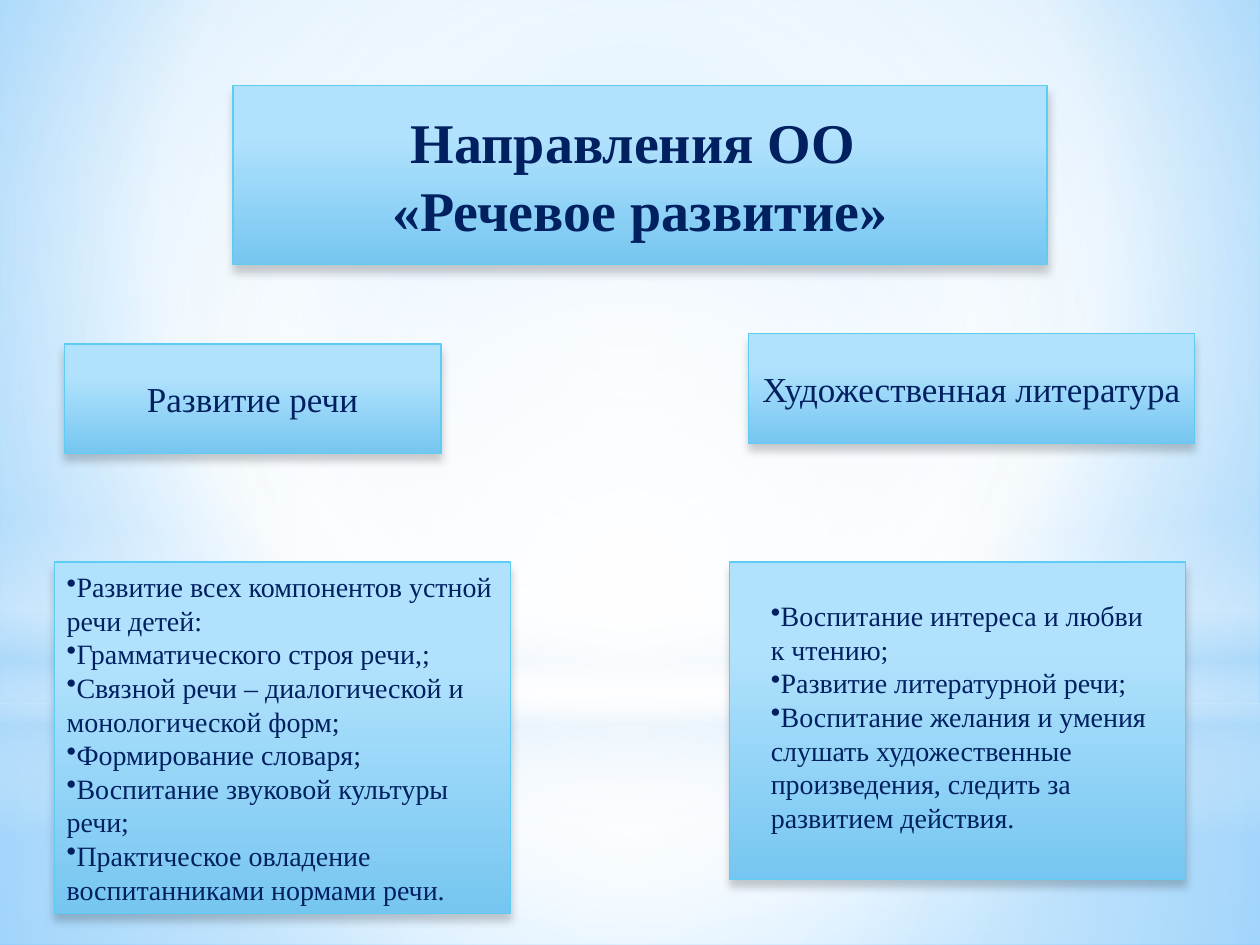
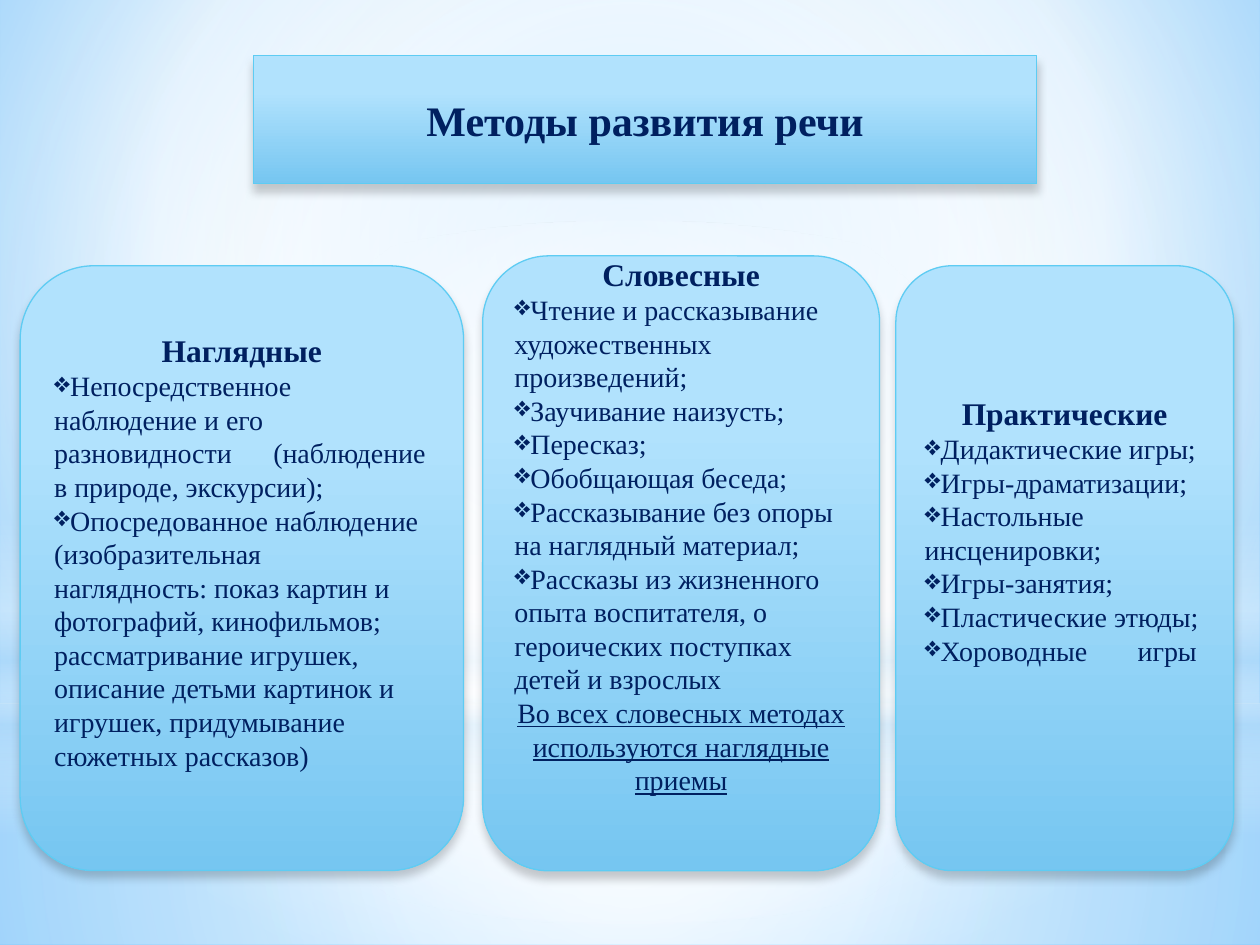
"""Build two slides on the directions and methods of speech development."""
from lxml import etree
from pptx import Presentation
from pptx.dml.color import RGBColor
from pptx.enum import shapes, text
from pptx.oxml import ns, parse_xml
from pptx.util import Pt

FONT = "Times New Roman"
COLORS = {"ink": "002060", "edge": "5ECCF3", "top": "B1E2FD", "bottom": "76C6F1",
          "white": "FFFFFF", "mist": "B4DCFA", "sky": "9ED5FF", "deep": "5BB9FF",
          "shadow": "000000"}
RECT = shapes.MSO_SHAPE.RECTANGLE
ROUND = shapes.MSO_SHAPE.ROUNDED_RECTANGLE
OVAL = shapes.MSO_SHAPE.OVAL
CENTER = (50, 50, 50, 50)

BACKGROUND = [(0, "sky", 100), (60, "white", 100), (100, "deep", 100)]
BACKDROP = [
    (RECT, (0, 401.8, 720, 138.2),
     [(0, "white", 91), (37, "white", 76), (100, "mist", 79)], CENTER),
    (RECT, (0, 0, 720, 401.8),
     [(0, "white", 89), (48, "white", 62), (100, "mist", 79)], CENTER),
    (RECT, (0, 296.6, 720, 180),
     [(0, "white", 0), (29, "white", 30), (45, "mist", 40), (55, "white", 26),
      (65, "mist", 60), (100, "white", 0)], None),
    (OVAL, (0, 126, 720, 401.8), [(0, "white", 100), (56, "white", 0)], CENTER),
]
PANEL = [(28, "top", 100), (100, "bottom", 100)]

DIRECTIONS_TITLE = ["Направления ОО ", "«Речевое развитие»"]
DIRECTIONS = [
    ("Развитие речи", (36.7, 196.6, 215.3, 62.6)),
    ("Художественная литература", (427.7, 190.8, 254.9, 62.6)),
]
SPEECH_GOALS = [
    "Развитие всех компонентов устной речи детей:",
    "Грамматического строя речи,;",
    "Связной речи – диалогической и монологической форм;",
    "Формирование словаря;",
    "Воспитание звуковой культуры речи;",
    "Практическое овладение воспитанниками нормами речи.",
]
READING_GOALS = [
    "Воспитание интереса и любви к чтению;",
    "Развитие литературной речи;",
    "Воспитание желания и умения слушать художественные произведения, "
    "следить за развитием действия.",
]
METHODS_TITLE = ["Методы развития речи"]
METHODS = [
    {"name": "Наглядные", "box": (11.5, 151.9, 253.4, 345.6), "foot": 22.8, "tab": 125.2,
     "items": [
         "Непосредственное наблюдение и его разновидности\t(наблюдение в природе, экскурсии);",
         "Опосредованное наблюдение (изобразительная\nнаглядность: показ картин и "
         "фотографий, кинофильмов; рассматривание игрушек, описание детьми картинок и "
         "игрушек, придумывание сюжетных рассказов)"]},
    {"name": "Практические", "box": (511.9, 151.9, 193, 345.6), "foot": 46.8, "tab": 121.7,
     "items": ["Дидактические игры;", "Игры-драматизации;", "Настольные инсценировки;",
               "Игры-занятия;", "Пластические этюды;", "Хороводные\tигры"]},
    {"name": "Словесные", "box": (275.8, 146.2, 226.8, 351.4), "foot": 46.8,
     "items": ["Чтение и рассказывание художественных произведений;",
               "Заучивание наизусть;", "Пересказ;", "Обобщающая беседа;",
               "Рассказывание без опоры на наглядный материал;",
               "Рассказы из жизненного опыта воспитателя, о героических поступках "
               "детей и взрослых"],
     "note": "Во всех словесных методах используются наглядные приемы"},
]


def rgb(name):
    return RGBColor.from_string(COLORS[name])


def add_xml(parent, tag, **attrs):
    return etree.SubElement(parent, ns.qn(tag), {k: str(v) for k, v in attrs.items()})


def paint(fill, root, stops, focus=None):
    fill.gradient()
    old = next(root.iter(ns.qn("a:gradFill")))
    grad = parse_xml(f'<a:gradFill {ns.nsdecls("a")} rotWithShape="1"/>')
    gs_list = add_xml(grad, "a:gsLst")
    for pos, color, alpha in stops:
        gs = add_xml(gs_list, "a:gs", pos=pos * 1000)
        clr = add_xml(gs, "a:srgbClr", val=COLORS[color])
        if alpha < 100:
            add_xml(clr, "a:alpha", val=alpha * 1000)
    if focus:
        way = add_xml(grad, "a:path", path="circle")
        add_xml(way, "a:fillToRect", **{k: v * 1000 for k, v in zip("ltrb", focus)})
    else:
        add_xml(grad, "a:lin", ang=90 * 60000, scaled=0)
    old.getparent().replace(old, grad)


def style_panel(sp):
    paint(sp.fill, sp.element.spPr, PANEL)
    sp.line.color.rgb = rgb("edge")
    sp.line.width = Pt(0.75)
    sp.shadow.inherit = False
    effects = sp.element.spPr.find(ns.qn("a:effectLst"))
    shadow = add_xml(effects, "a:outerShdw", blurRad=Pt(5), dist=Pt(4),
                     dir=90 * 60000, algn="ctr", rotWithShape=0)
    clr = add_xml(shadow, "a:srgbClr", val=COLORS["shadow"])
    add_xml(clr, "a:alpha", val=20000)


def add_panel(s, kind, box):
    sp = s.shapes.add_shape(kind, *map(Pt, box))
    style_panel(sp)
    return sp


def setup_text(sp):
    tf = sp.text_frame
    tf.word_wrap = True
    tf.auto_size = text.MSO_AUTO_SIZE.NONE
    tf.vertical_anchor = text.MSO_ANCHOR.MIDDLE
    return tf


def write(tf, lines, size, bold=False, underline=None, bullet=None, tab=None):
    for line in lines:
        p = tf.paragraphs[0]
        if p.runs:
            p = tf.add_paragraph()
        p.alignment = text.PP_ALIGN.LEFT if bullet else text.PP_ALIGN.CENTER
        if bullet:
            pPr = p._p.get_or_add_pPr()
            add_xml(pPr, "a:buChar", char=bullet)
            if tab and "\t" in line:
                add_xml(add_xml(pPr, "a:tabLst"), "a:tab", pos=Pt(tab), algn="l")
        for i, part in enumerate(line.split("\n")):
            if i:
                p.add_line_break()
            r = p.add_run()
            r.text = part
            r.font.name = FONT
            r.font.size = Pt(size)
            r.font.bold = bold
            r.font.underline = underline
            r.font.color.rgb = rgb("ink")


def add_titled_slide(prs, lines, size, geometry, box):
    s = prs.slides.add_slide(prs.slide_layouts[5])
    sp = s.shapes.title
    sp.left, sp.top, sp.width, sp.height = map(Pt, box)
    geom = parse_xml(f'<a:prstGeom {ns.nsdecls("a")} prst="{geometry}"><a:avLst/></a:prstGeom>')
    sp.element.spPr.insert(1, geom)
    style_panel(sp)
    write(setup_text(sp), lines, size, bold=True)
    return s


def build_backdrop(prs, s):
    master = prs.slide_master
    paint(master.background.fill, master.element, BACKGROUND, (20, 10, 20, 60))
    for i, (kind, box, stops, focus) in enumerate(BACKDROP):
        sp = s.shapes.add_shape(kind, *map(Pt, box))
        paint(sp.fill, sp.element.spPr, stops, focus)
        sp.line.fill.background()
        sp.shadow.inherit = False
        sp.element.nvSpPr.cNvPr.set("id", str(100 + i))
        master.shapes.element.insert(2 + i, sp.element)


def build_directions(prs):
    s = add_titled_slide(prs, DIRECTIONS_TITLE, 32, "rect", (133.2, 49, 465.1, 102.2))
    build_backdrop(prs, s)
    for name, box in DIRECTIONS:
        write(setup_text(add_panel(s, RECT, box)), [name], 20)
    speech = add_panel(s, RECT, (31, 321.1, 260.6, 200.9))
    write(setup_text(speech), SPEECH_GOALS, 16, bullet="•")
    add_panel(s, RECT, (416.9, 321.1, 260.6, 181.4))
    reading = s.shapes.add_textbox(*map(Pt, (433.4, 337.7, 238.3, 143.3)))
    write(setup_text(reading), READING_GOALS, 16, bullet="•")


def build_methods(prs):
    s = add_titled_slide(prs, METHODS_TITLE, 24, "roundRect", (144.7, 31.7, 447.8, 73.4))
    for method in METHODS:
        tf = setup_text(add_panel(s, ROUND, method["box"]))
        tf.margin_bottom = Pt(method["foot"])
        write(tf, [method["name"]], 18, bold=True)
        write(tf, method["items"], 16, bullet="❖", tab=method.get("tab"))
        if "note" in method:
            write(tf, [method["note"]], 16, underline=True)


def main():
    prs = Presentation()
    prs.slide_width, prs.slide_height = Pt(720), Pt(540)
    build_directions(prs)
    build_methods(prs)
    prs.save("out.pptx")


if __name__ == "__main__":
    main()
